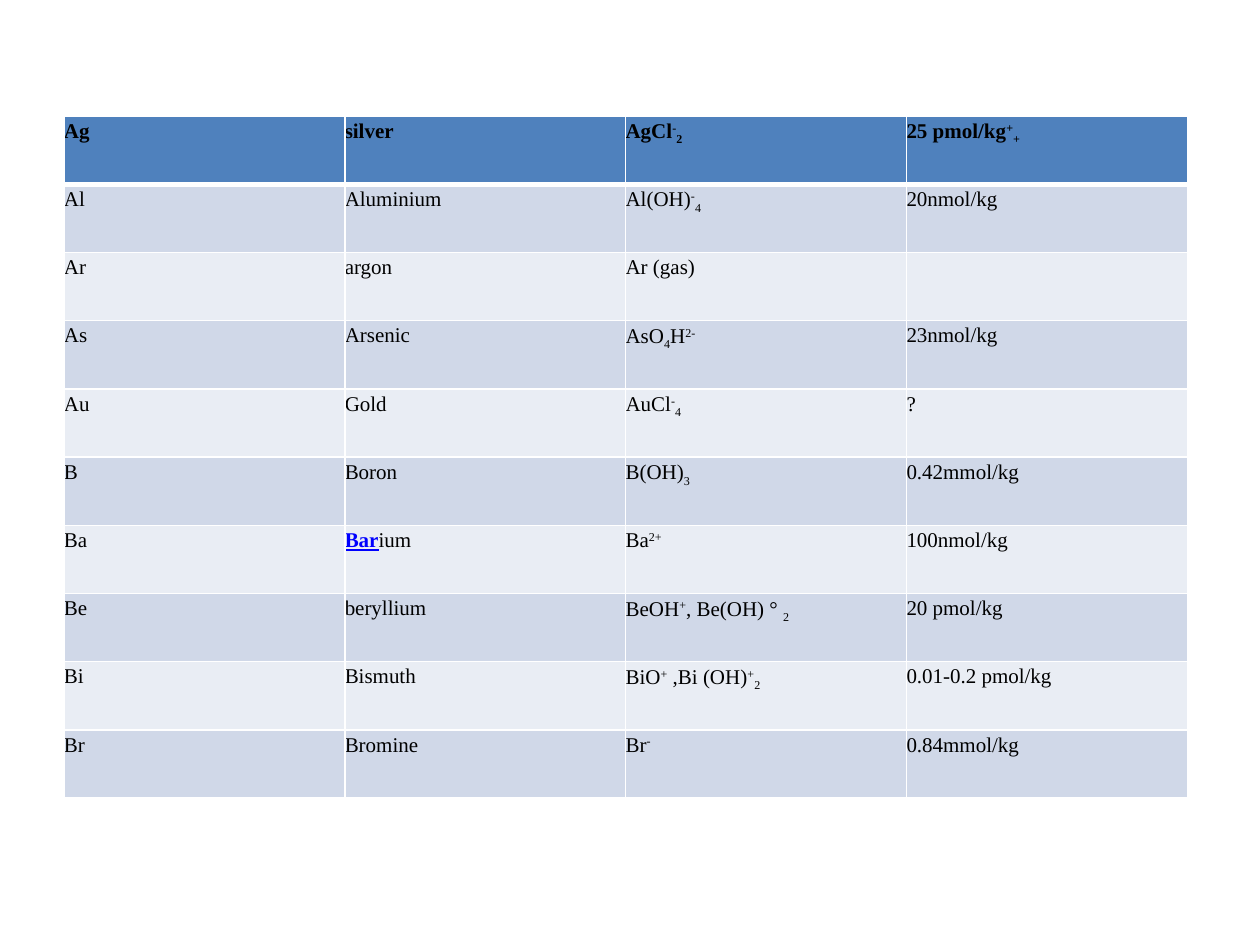
from dataclasses import dataclass
from typing import NamedTuple

from lxml import etree
from pptx import Presentation
from pptx import util as u
from pptx.dml.color import RGBColor
from pptx.enum import text
from pptx.oxml import ns


@dataclass(frozen=True)
class Theme:
    font: str = "Times New Roman"
    size: u.Length = u.Pt(12)
    ink: str = "000000"
    link: str = "0000FF"
    border: str = "FFFFFF"
    header: str = "4F81BD"
    bands: tuple[str, str] = ("D0D8E8", "E9EDF4")
    thin: u.Length = u.Pt(1)
    thick: u.Length = u.Pt(3)


class Span(NamedTuple):
    text: str
    baseline: int = 0  # percent of the type size
    link: bool = False


class Element(NamedTuple):
    symbol: str
    name: tuple[Span, ...]
    species: tuple[Span, ...]
    concentration: tuple[Span, ...]


def plain(words: str) -> tuple[Span, ...]:
    return (Span(words),)


def sup(words: str) -> Span:
    return Span(words, 30)


def sub(words: str) -> Span:
    return Span(words, -25)


THEME = Theme()
LEFT, TOP = u.Pt(36.5), u.Pt(66.3)
COLUMN_WIDTH, ROW_HEIGHT = u.Pt(160.5), u.Pt(39)

ELEMENTS = [
    Element("Ag", plain("silver"), (Span("AgCl"), sup("-"), sub("2")),
            (Span("25 pmol/kg"), sup("+"), sub("+"))),
    Element("Al", plain("Aluminium"), (Span("Al(OH)"), sup("-"), sub("4")),
            plain("20nmol/kg")),
    Element("Ar", plain("argon"), plain("Ar (gas)"), ()),
    Element("As", plain("Arsenic"),
            (Span("AsO"), sub("4"), Span("H"), sup("2-")), plain("23nmol/kg")),
    Element("Au", plain("Gold"), (Span("AuCl"), sup("-"), sub("4")), plain("?")),
    Element("B", plain("Boron"), (Span("B(OH)"), sub("3")), plain("0.42mmol/kg")),
    Element("Ba", (Span("Bar", link=True), Span("ium")),
            (Span("Ba"), sup("2+")), plain("100nmol/kg")),
    Element("Be", plain("beryllium"),
            (Span("BeOH"), sup("+"), Span(", Be(OH) ° "), sub("2")),
            plain("20 pmol/kg")),
    Element("Bi", plain("Bismuth"),
            (Span("BiO"), sup("+"), Span(" ,Bi (OH)"), sup("+"), sub("2")),
            plain("0.01-0.2 pmol/kg")),
    Element("Br", plain("Bromine"), (Span("Br"), sup("-")), plain("0.84mmol/kg")),
]


def set_borders(cell, top: u.Length, bottom: u.Length) -> None:
    """Draw the four edges, placed before the fill as the schema requires."""
    properties = cell._tc.get_or_add_tcPr()
    widths = {"lnL": THEME.thin, "lnR": THEME.thin, "lnT": top, "lnB": bottom}
    for position, (edge, width) in enumerate(widths.items()):
        line = etree.Element(ns.qn(f"a:{edge}"), w=str(int(width)))
        fill = etree.SubElement(line, ns.qn("a:solidFill"))
        etree.SubElement(fill, ns.qn("a:srgbClr"), val=THEME.border)
        properties.insert(position, line)


def write_spans(cell, spans: tuple[Span, ...], bold: bool) -> None:
    cell.margin_left = cell.margin_right = u.Pt(0)
    cell.margin_top = cell.margin_bottom = u.Pt(0)
    paragraph = cell.text_frame.paragraphs[0]
    paragraph.alignment = text.PP_ALIGN.JUSTIFY
    paragraph.line_spacing = 1.15
    paragraph.space_after = u.Pt(10)
    for span in spans:
        run = paragraph.add_run()
        run.text = span.text
        run.font.name = THEME.font
        run.font.size = THEME.size
        run.font.bold = bold or span.link
        run.font.underline = span.link
        run.font.color.rgb = RGBColor.from_string(
            THEME.link if span.link else THEME.ink)
        if span.baseline:
            run._r.get_or_add_rPr().set("baseline", str(span.baseline * 1000))


def add_element_table(slide, elements: list[Element]) -> None:
    row_count, column_count = len(elements), len(Element._fields)
    table = slide.shapes.add_table(
        row_count, column_count, LEFT, TOP,
        COLUMN_WIDTH * column_count, ROW_HEIGHT * row_count).table
    for column in table.columns:
        column.width = COLUMN_WIDTH
    for index, element in enumerate(elements):
        table.rows[index].height = ROW_HEIGHT
        is_header = index == 0
        color = THEME.header if is_header else THEME.bands[(index - 1) % 2]
        top = THEME.thick if index == 1 else THEME.thin
        bottom = THEME.thick if is_header else THEME.thin
        contents = (plain(element.symbol), *element[1:])
        for cell, spans in zip(table.rows[index].cells, contents):
            cell.fill.solid()
            cell.fill.fore_color.rgb = RGBColor.from_string(color)
            set_borders(cell, top, bottom)
            write_spans(cell, spans, bold=is_header)


def main() -> None:
    presentation = Presentation()
    presentation.slide_width, presentation.slide_height = u.Pt(720), u.Pt(540)
    slide = presentation.slides.add_slide(presentation.slide_layouts[6])
    add_element_table(slide, ELEMENTS)
    presentation.save("out.pptx")


if __name__ == "__main__":
    main()
